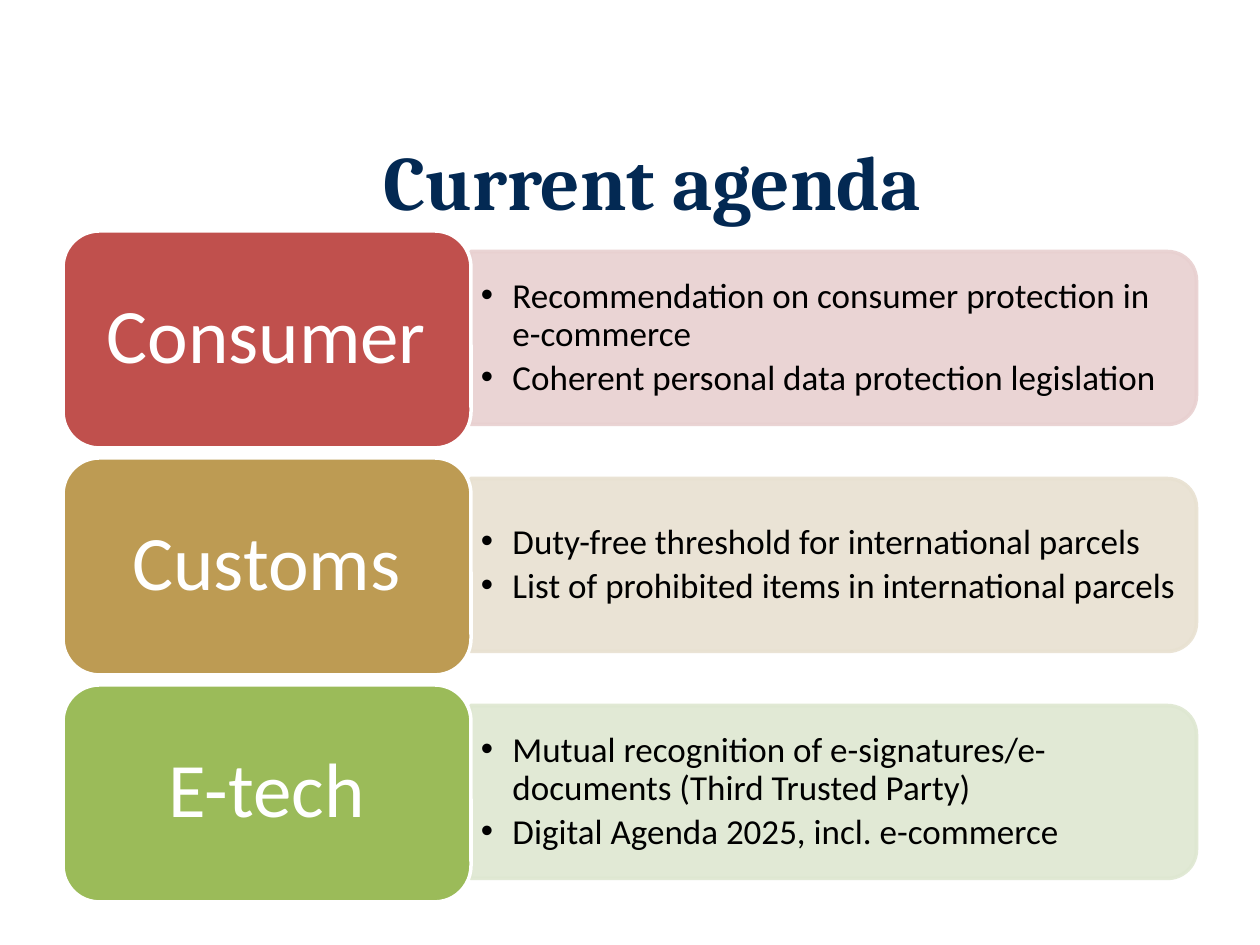
from lxml.etree import SubElement
from pptx import Presentation
from pptx.dml.color import RGBColor
from pptx.enum.shapes import MSO_SHAPE
from pptx.enum.text import MSO_ANCHOR, PP_ALIGN
from pptx.oxml.ns import qn
from pptx.util import Emu, Pt

COLORS = {
    "title": "032953", "white": "FFFFFF", "black": "000000",
    "red": "C0504D", "pink": "E8D0D0",
    "gold": "BD9B53", "sand": "E8E1D1",
    "green": "9BBB59", "mint": "DEE7D1",
}
TOPICS = [
    ("Consumer", "red", "pink", [
        "Recommendation on consumer protection in e-commerce",
        "Coherent personal data protection legislation"]),
    ("Customs", "gold", "sand", [
        "Duty-free threshold for international parcels",
        "List of prohibited items in international parcels"]),
    ("E-tech", "green", "mint", [
        "Mutual recognition of e-signatures/e-documents (Third Trusted Party)",
        "Digital Agenda 2025, incl. e-commerce"]),
]
TOP, PITCH = 231, 227


def px(count):
    """Turn pixels into EMU."""
    return Emu(round(count * 914400 / 126))


def color(name):
    """Look up a named colour."""
    return RGBColor.from_string(COLORS[name])


def add_block(slide, kind, box, fill, line):
    """Add a filled shape with a 2 pt outline."""
    shape = slide.shapes.add_shape(kind, *map(px, box))
    shape.shadow.inherit = False
    shape.fill.solid()
    shape.fill.fore_color.rgb = color(fill)
    shape.line.color.rgb = color(line)
    shape.line.width = Pt(2)
    return shape


def add_panel(slide, top, fill):
    """Add a pale panel, rounded on its right side."""
    panel = add_block(slide, MSO_SHAPE.ROUND_2_SAME_RECTANGLE,
                      (747, top - 256, 173, 726), fill, fill)
    panel.rotation = 90
    for tint in panel.element.spPr.iter(qn("a:srgbClr")):
        SubElement(tint, qn("a:alpha"), val="90000")


def add_text(slide, box, inset):
    """Add a wrapped, vertically centred text box and return its frame."""
    frame = slide.shapes.add_textbox(*map(px, box)).text_frame
    frame.word_wrap = True
    frame.vertical_anchor = MSO_ANCHOR.MIDDLE
    frame.margin_left = frame.margin_right = px(inset)
    frame.margin_top = frame.margin_bottom = px(inset / 2)
    return frame


def set_font(para, face, size, name, bold=False):
    """Set the font of a paragraph."""
    font = para.font
    font.name, font.size, font.bold = face, Pt(size), bold
    font.color.rgb = color(name)


def add_head(slide, box, inset, text, face, name, bold=False):
    """Add one centred line of large text."""
    para = add_text(slide, box, inset).paragraphs[0]
    para.text = text
    para.alignment = PP_ALIGN.CENTER
    set_font(para, face, 44, name, bold)
    return para


def add_list(slide, box, items):
    """Add a bulleted list."""
    frame = add_text(slide, box, 10)
    for index, item in enumerate(items):
        para = frame.add_paragraph() if index else frame.paragraphs[0]
        para.text = item
        para.line_spacing = 0.9
        if index:
            para.space_before = Pt(3.6)
        props = para._p.get_or_add_pPr()
        props.set("marL", "228600")
        props.set("indent", "-228600")
        SubElement(props, qn("a:buFont"), typeface="Arial")
        SubElement(props, qn("a:buChar"), char="•")
        set_font(para, "Calibri", 20, "black")


def add_topic(slide, top, label, fill, pale, items):
    """Add one agenda row: panel, list and labelled card."""
    add_panel(slide, top, pale)
    add_list(slide, (471, top + 29, 717, 156), items)
    add_block(slide, MSO_SHAPE.ROUNDED_RECTANGLE, (63, top, 408, 217),
              fill, "white")
    para = add_head(slide, (73, top + 10, 387, 195), 23, label,
                    "Calibri", "white")
    para.line_spacing = 0.9


def main():
    """Build the agenda slide."""
    deck = Presentation()
    deck.slide_width, deck.slide_height = px(1260), px(945)
    slide = deck.slides.add_slide(deck.slide_layouts[6])
    for row, topic in enumerate(TOPICS):
        add_topic(slide, TOP + row * PITCH, *topic)
    add_head(slide, (54, 150, 1197, 60), 13, "Current agenda",
             "Cambria", "title", True)
    deck.save("out.pptx")


if __name__ == "__main__":
    main()
